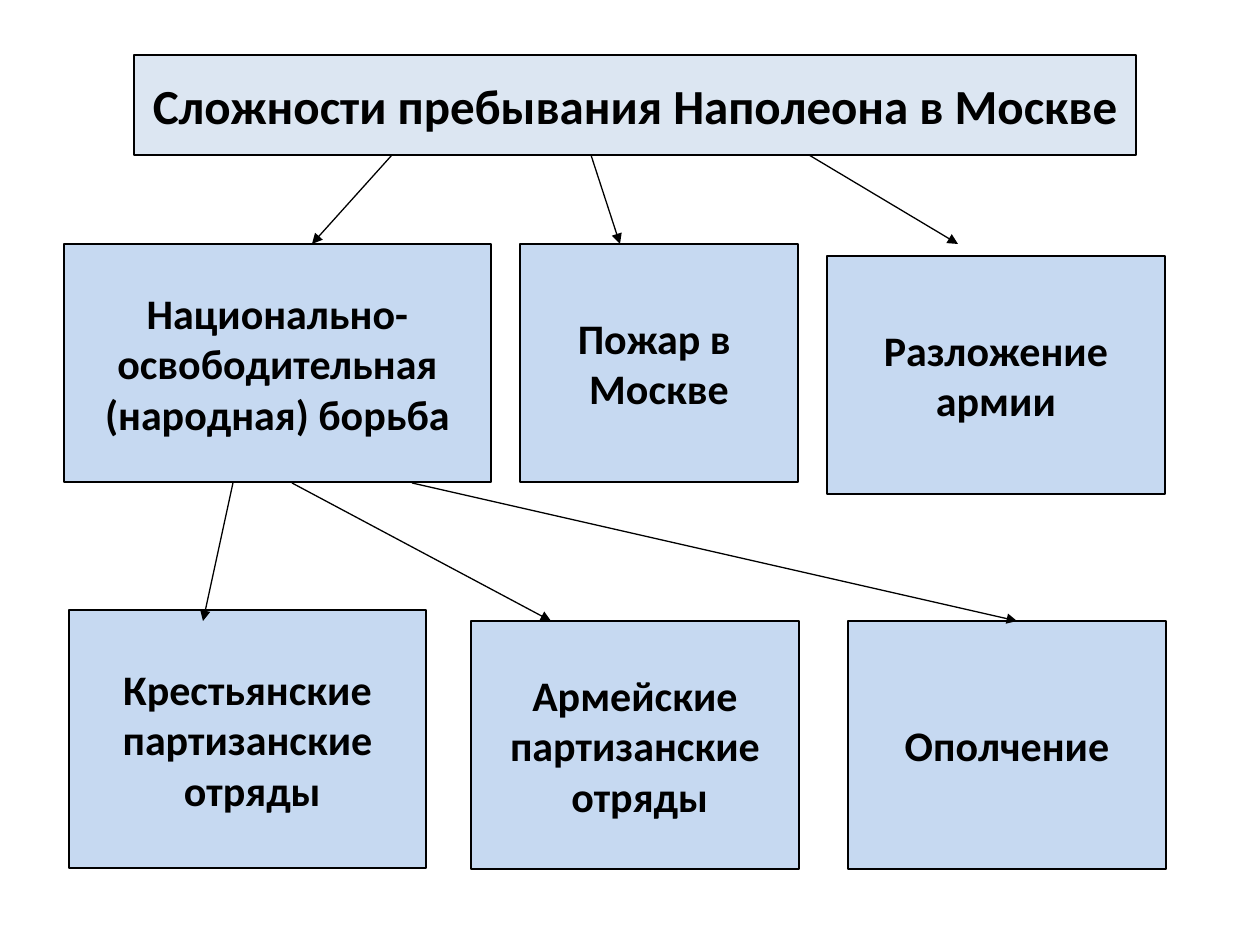
from pptx import Presentation
from pptx import util as u
from pptx.dml.color import RGBColor
from pptx.enum import shapes, text
from pptx.oxml.ns import qn
from lxml import etree

THEME = {
    "font": "Calibri",
    "ink": RGBColor.from_string("000000"),
    "title_fill": RGBColor.from_string("DCE6F2"),
    "box_fill": RGBColor.from_string("C6D9F1"),
    "title_size": u.Pt(28),
    "box_size": u.Pt(24),
    "line": u.Pt(0.75),
}
PX_PER_INCH = 126


def px(*lengths):
    return [u.Emu(round(n * 914400 / PX_PER_INCH)) for n in lengths]


def style_box(box, lines, fill, size):
    box.fill.solid()
    box.fill.fore_color.rgb = fill
    box.line.color.rgb = THEME["ink"]
    box.line.width = THEME["line"]
    frame = box.text_frame
    frame.word_wrap = False
    frame.auto_size = text.MSO_AUTO_SIZE.NONE
    frame.vertical_anchor = text.MSO_ANCHOR.MIDDLE
    for i, line in enumerate(lines):
        para = frame.add_paragraph() if i else frame.paragraphs[0]
        para.alignment = text.PP_ALIGN.CENTER
        span = para.add_run()
        span.text = line
        span.font.name = THEME["font"]
        span.font.size = size
        span.font.bold = True
        span.font.color.rgb = THEME["ink"]


deck = Presentation()
deck.slide_width, deck.slide_height = px(1260, 945)
page = deck.slides.add_slide(deck.slide_layouts[5])

# Title
title = page.shapes.title
title.left, title.top, title.width, title.height = px(134, 55, 1002, 100)
style_box(title, ["Сложности пребывания Наполеона в Москве"],
          THEME["title_fill"], THEME["title_size"])

# Difficulties, then the forces of the people's struggle
boxes = [
    ((827, 256, 338, 238), ["Разложение", "армии"]),
    ((848, 621, 318, 248), ["Ополчение"]),
    ((471, 621, 328, 248), ["Армейские", "партизанские", " отряды"]),
    ((69, 610, 357, 258), ["Крестьянские", "партизанские", " отряды"]),
    ((64, 244, 427, 238), ["Национально-", "освободительная", "(народная) борьба"]),
    ((520, 244, 278, 238), ["Пожар в ", "Москве"]),
]
for place, lines in boxes:
    box = page.shapes.add_shape(shapes.MSO_SHAPE.RECTANGLE, *px(*place))
    box.shadow.inherit = False
    style_box(box, lines, THEME["box_fill"], THEME["box_size"])

# Arrows: each level gives its top, its bottom and the start and end x of each arrow
levels = [
    (155, 244, [(591, 620), (392, 312), (809, 958)]),
    (483, 621, [(233, 203), (292, 551), (412, 1017)]),
]
for top, bottom, arrows in levels:
    for start, end in arrows:
        arrow = page.shapes.add_connector(
            shapes.MSO_CONNECTOR.STRAIGHT, *px(start, top, end, bottom))
        arrow.line.color.rgb = THEME["ink"]
        arrow.line.width = THEME["line"]
        etree.SubElement(arrow.line._get_or_add_ln(), qn("a:tailEnd"), type="triangle")
        etree.SubElement(arrow._element.spPr, qn("a:effectLst"))

deck.save("out.pptx")
